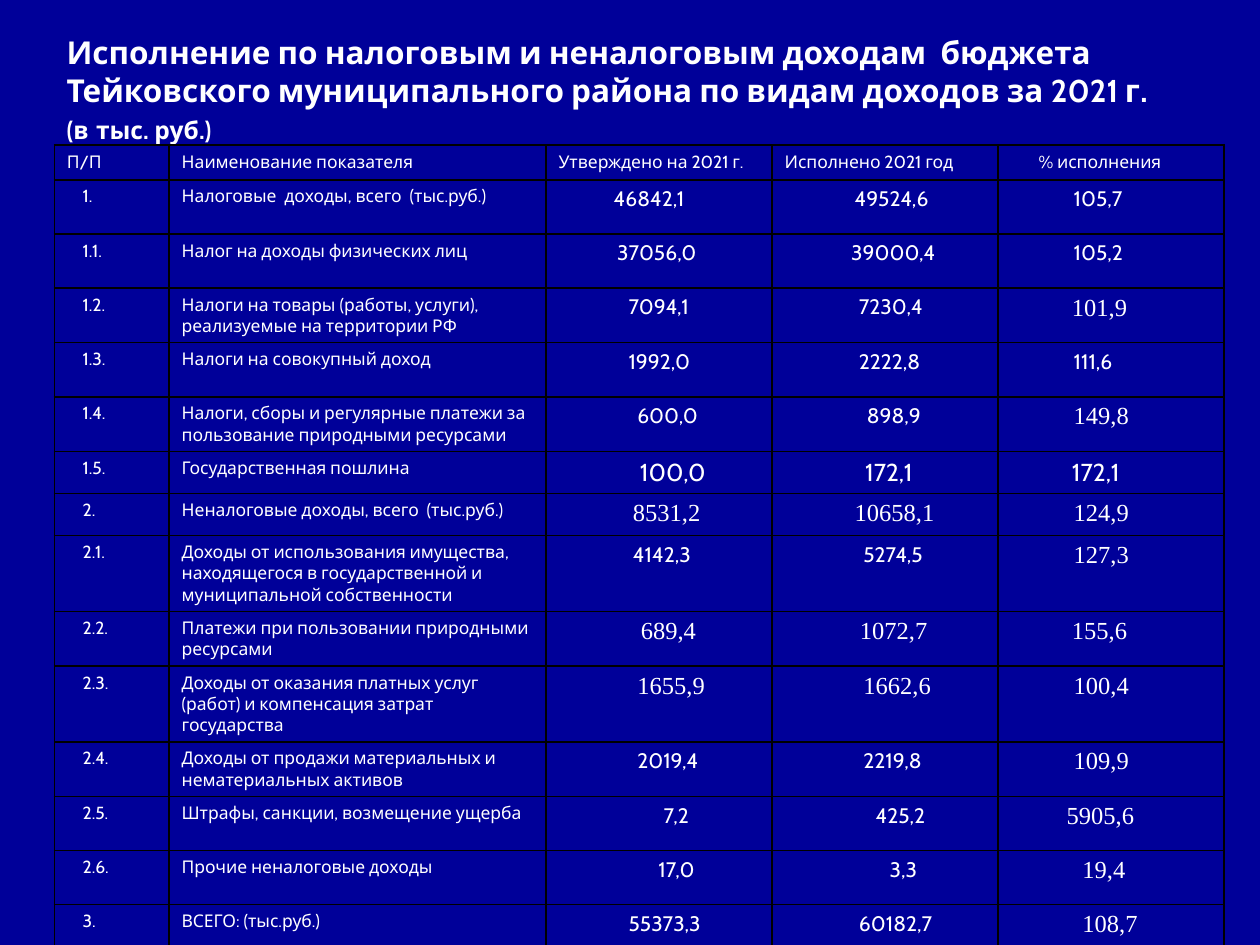
from pptx import Presentation
from pptx.dml.color import RGBColor as RGB
from pptx.enum.text import MSO_ANCHOR as ANCHOR
from pptx.oxml import parse_xml
from pptx.oxml.ns import nsdecls
from pptx.util import Pt

COLORS = {"back": "000099", "text": "FFFFFF", "border": "000000"}
SANS, SERIF = "Cabin", "Times New Roman"
MEDIUM = {"size": 12}
LARGE = {"size": 14}
ROMAN = {"size": 14, "font": SERIF}

WIDTHS = [65.6, 215.4, 129.2, 129.2, 129.2]
LOW, MIDDLE, HIGH = 20, 23.2, 30.9
HEADER = ["П/П", "Наименование показателя", "Утверждено на 2021 г.",
          "Исполнено 2021 год", ("% исполнения", 16, {})]
ROWS = [
    ("1.", "Налоговые  доходы, всего  (тыс.руб.)",
     ("46842,1", 31.5, MEDIUM), ("49524,6", 40, MEDIUM), ("105,7", 36, MEDIUM)),
    ("1.1.", "Налог на доходы физических лиц",
     ("37056,0", 33.5, MEDIUM), ("39000,4", 38, MEDIUM), ("105,2", 36, MEDIUM)),
    ("1.2.", "Налоги на товары (работы, услуги), реализуемые на территории РФ",
     ("7094,1", 40, MEDIUM), ("7230,4", 42.5, MEDIUM), ("101,9", 35, ROMAN)),
    ("1.3.", "Налоги на совокупный доход",
     ("1992,0", 40, MEDIUM), ("2222,8", 42.5, MEDIUM), ("111,6", 36, MEDIUM)),
    ("1.4.", "Налоги, сборы и регулярные платежи за пользование природными ресурсами",
     ("600,0", 45, MEDIUM), ("898,9", 47, MEDIUM), ("149,8", 36, ROMAN)),
    ("1.5.", "Государственная пошлина",
     ("100,0", 46.5, LARGE), ("172,1", 46, LARGE), ("172,1", 35, LARGE)),
    ("2.", "Неналоговые доходы, всего  (тыс.руб.)",
     ("8531,2", 42.5, ROMAN), ("10658,1", 40, ROMAN), ("124,9", 36, ROMAN)),
    ("2.1.", "Доходы от использования имущества, находящегося в государственной "
     "и муниципальной собственности",
     ("4142,3", 42.5, MEDIUM), ("5274,5", 45, MEDIUM), ("127,3", 36, ROMAN)),
    ("2.2.", "Платежи при пользовании природными ресурсами",
     ("689,4", 47, ROMAN), ("1072,7", 43, ROMAN), ("155,6", 35, ROMAN)),
    ("2.3.", "Доходы от оказания платных услуг (работ) и компенсация затрат государства",
     ("1655,9", 45, ROMAN), ("1662,6", 45, ROMAN), ("100,4", 36, ROMAN)),
    ("2.4.", "Доходы от продажи материальных и нематериальных активов",
     ("2019,4", 45, MEDIUM), ("2219,8", 45, MEDIUM), ("109,9", 36, ROMAN)),
    ("2.5.", "Штрафы, санкции, возмещение ущерба",
     ("7,2", 60, MEDIUM), ("425,2", 52, MEDIUM), ("5905,6", 32, ROMAN)),
    ("2.6.", "Прочие неналоговые доходы",
     ("17,0", 57, MEDIUM), ("3,3", 60, MEDIUM), ("19,4", 41, ROMAN)),
    ("3.", "ВСЕГО: (тыс.руб.)",
     ("55373,3", 40, MEDIUM), ("60182,7", 42.5, MEDIUM), ("108,7", 41, ROMAN)),
]


def add_text(p, text, size=10, font=SANS, bold=False, indent=0):
    r = p.add_run()
    r.text = text
    r.font.size = Pt(size)
    r.font.name = font
    r.font.bold = bold
    r.font.color.rgb = RGB.from_string(COLORS["text"])
    if indent:
        p._p.get_or_add_pPr().set("marL", str(Pt(indent)))


class Deck:
    def __init__(self, width, height):
        self.prs = Presentation()
        self.prs.slide_width, self.prs.slide_height = Pt(width), Pt(height)
        self.s = self.prs.slides.add_slide(self.prs.slide_layouts[6])
        self.paint(self.s.background.fill)

    def paint(self, fill):
        fill.solid()
        fill.fore_color.rgb = RGB.from_string(COLORS["back"])

    def title(self, x, y, w, h, runs):
        tf = self.s.shapes.add_textbox(Pt(x), Pt(y), Pt(w), Pt(h)).text_frame
        tf.word_wrap = True
        tf.vertical_anchor = ANCHOR.MIDDLE
        for text, size in runs:
            add_text(tf.paragraphs[0], text, size=size, bold=True)

    def border(self, cell):
        tcPr = cell._tc.get_or_add_tcPr()
        for side in "LRTB":
            tcPr.append(parse_xml(
                f'<a:ln{side} {nsdecls("a")} w="{Pt(1)}"><a:solidFill>'
                f'<a:srgbClr val="{COLORS["border"]}"/></a:solidFill></a:ln{side}>'))

    def table(self, x, y, widths, heights, rows):
        frame = self.s.shapes.add_table(len(rows), len(widths), Pt(x), Pt(y),
                                        Pt(sum(widths)), Pt(sum(heights)))
        table = frame.table
        table.first_row = table.horz_banding = False
        for column, width in zip(table.columns, widths):
            column.width = Pt(width)
        for row, height, values in zip(table.rows, heights, rows):
            row.height = Pt(height)
            for cell, value in zip(row.cells, values):
                text, indent, style = value if isinstance(value, tuple) else (value, 0, {})
                self.border(cell)
                self.paint(cell.fill)
                add_text(cell.text_frame.paragraphs[0], text, indent=indent, **style)


def main():
    deck = Deck(720, 540)
    deck.title(31, 0, 647.3, 102.2, [
        ("Исполнение по налоговым и неналоговым доходам  бюджета Тейковского "
         "муниципального района по видам доходов за 2021 г. ", 18),
        ("(в", 14), (" ", 18), ("тыс. руб.)", 14)])
    rows = [HEADER] + [((number, 9, {}), *rest) for number, *rest in ROWS]
    heights = [LOW] + [MIDDLE if row[0] in ("1.5.", "2.") else HIGH for row in ROWS]
    deck.table(31, 82.8, WIDTHS, heights, rows)
    deck.prs.save("out.pptx")


if __name__ == "__main__":
    main()
